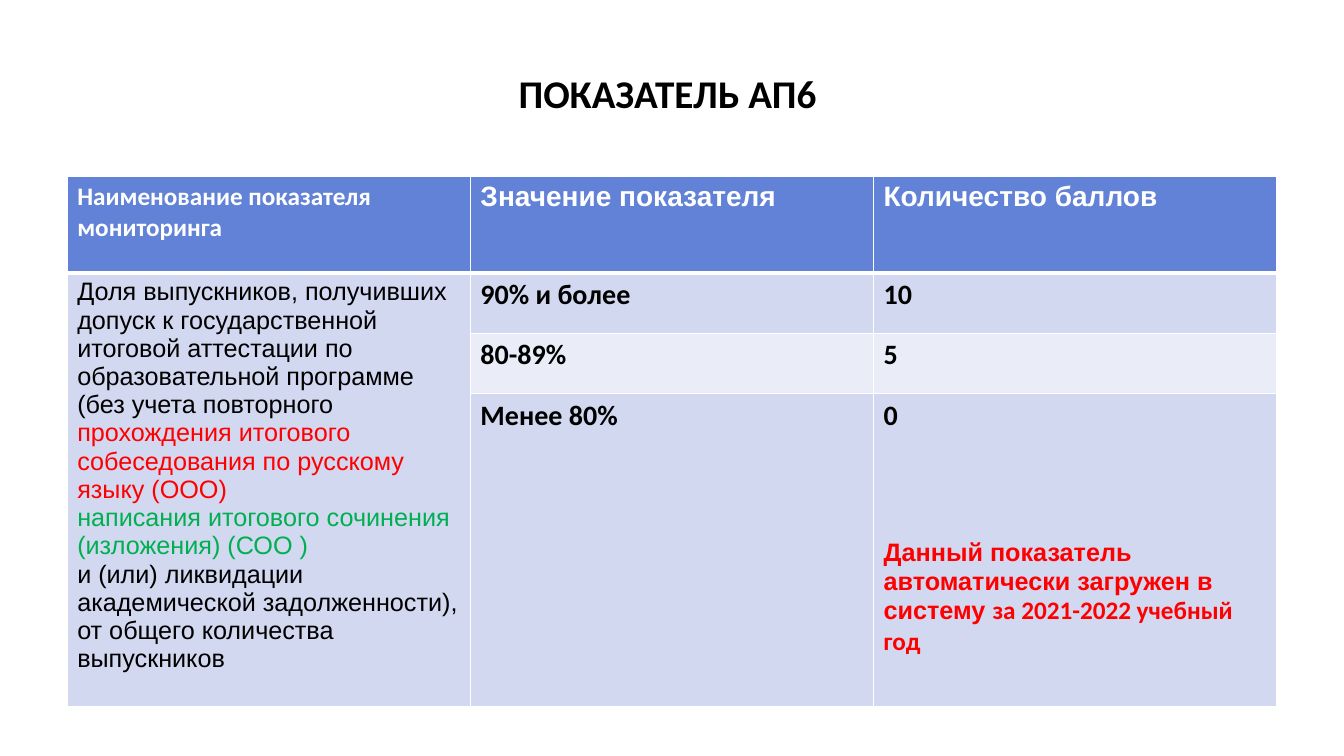
"""Build the slide for indicator АП6 with its scoring table."""
from lxml.etree import SubElement
from pptx import Presentation
from pptx.dml.color import RGBColor
from pptx.enum.text import MSO_ANCHOR, PP_ALIGN
from pptx.oxml.ns import qn
from pptx.util import Pt

WHITE, BLACK, RED, GREEN = "FFFFFF", "000000", "FF0000", "00B050"
HEADER_FILL, BAND_FILLS = "6182D6", ("D2D8F0", "EAEDF7")
TITLE = "ПОКАЗАТЕЛЬ АП6 "
HEADERS = [
    ("Наименование показателя мониторинга", "Calibri", 18),
    ("Значение показателя", "Arial", 20),
    ("Количество баллов", "Arial", 20),
]
INDICATOR = [
    ("Доля выпускников, получивших допуск к государственной итоговой аттестации "
     "по образовательной программе (без учета повторного", BLACK),
    ("прохождения итогового собеседования по русскому языку (ООО)", RED),
    ("написания итогового сочинения (изложения) (СОО )", GREEN),
    ("и (или) ликвидации академической задолженности), "
     "от общего количества выпускников", BLACK),
]
SCORES = [("90% и более", "10"), ("80-89%", "5"), ("Менее 80%", "0")]
NOTE = [("Данный показатель автоматически загружен в систему ", "Arial"),
        ("за 2021-2022 учебный год", "Calibri")]
NOTE_GAP = 76
LEFT, TABLE_TOP, WIDTH = 48, 126, 864
ROW_HEIGHTS = [69, 43, 43, 214]


def rgb(code):
    return RGBColor.from_string(code)


def write(paragraph, text, font="Calibri", size=20, color=BLACK, bold=True):
    run = paragraph.add_run()
    run.text = text
    run.font.name, run.font.size, run.font.bold = font, Pt(size), bold
    run.font.color.rgb = rgb(color)


def add_borders(cell, widths):
    properties = cell._tc.get_or_add_tcPr()
    for position, (side, width) in enumerate(widths.items()):
        line = properties.makeelement(qn(f"a:{side}"), {"w": str(Pt(width))})
        fill = SubElement(line, qn("a:solidFill"))
        SubElement(fill, qn("a:srgbClr"), val=WHITE)
        properties.insert(position, line)


def main():
    deck = Presentation()
    deck.slide_width, deck.slide_height = Pt(960), Pt(540)
    slide = deck.slides.add_slide(deck.slide_layouts[6])

    title = slide.shapes.add_textbox(Pt(LEFT), Pt(21.6), Pt(WIDTH), Pt(90)).text_frame
    title.word_wrap = True
    title.vertical_anchor = MSO_ANCHOR.MIDDLE
    title.paragraphs[0].alignment = PP_ALIGN.CENTER
    write(title.paragraphs[0], TITLE, size=28)

    table = slide.shapes.add_table(
        len(ROW_HEIGHTS), len(HEADERS), Pt(LEFT), Pt(TABLE_TOP),
        Pt(WIDTH), Pt(sum(ROW_HEIGHTS))).table
    for column in table.columns:
        column.width = Pt(WIDTH / len(HEADERS))
    for row_index, height in enumerate(ROW_HEIGHTS):
        table.rows[row_index].height = Pt(height)
        for column_index in range(len(HEADERS)):
            cell = table.cell(row_index, column_index)
            band = 0 if column_index == 0 else (row_index - 1) % 2
            cell.fill.solid()
            cell.fill.fore_color.rgb = rgb(BAND_FILLS[band] if row_index else HEADER_FILL)
            add_borders(cell, {"lnL": 1, "lnR": 1,
                               "lnT": 3 if row_index == 1 else 1,
                               "lnB": 3 if row_index == 0 else 1})

    for column_index, (text, font, size) in enumerate(HEADERS):
        heading = table.cell(0, column_index).text_frame.paragraphs[0]
        write(heading, text, font, size, WHITE)

    indicator = table.cell(1, 0)
    indicator.merge(table.cell(len(SCORES), 0))
    for index, (text, color) in enumerate(INDICATOR):
        frame = indicator.text_frame
        paragraph = frame.add_paragraph() if index else frame.paragraphs[0]
        write(paragraph, text, "Arial", 18, color, bold=False)

    for row_index, score in enumerate(SCORES, 1):
        for column_index, text in enumerate(score, 1):
            write(table.cell(row_index, column_index).text_frame.paragraphs[0], text)

    note = table.cell(len(SCORES), 2).text_frame.add_paragraph()
    note.space_before = Pt(NOTE_GAP)
    for text, font in NOTE:
        write(note, text, font, 18, RED)

    deck.save("out.pptx")


if __name__ == "__main__":
    main()
